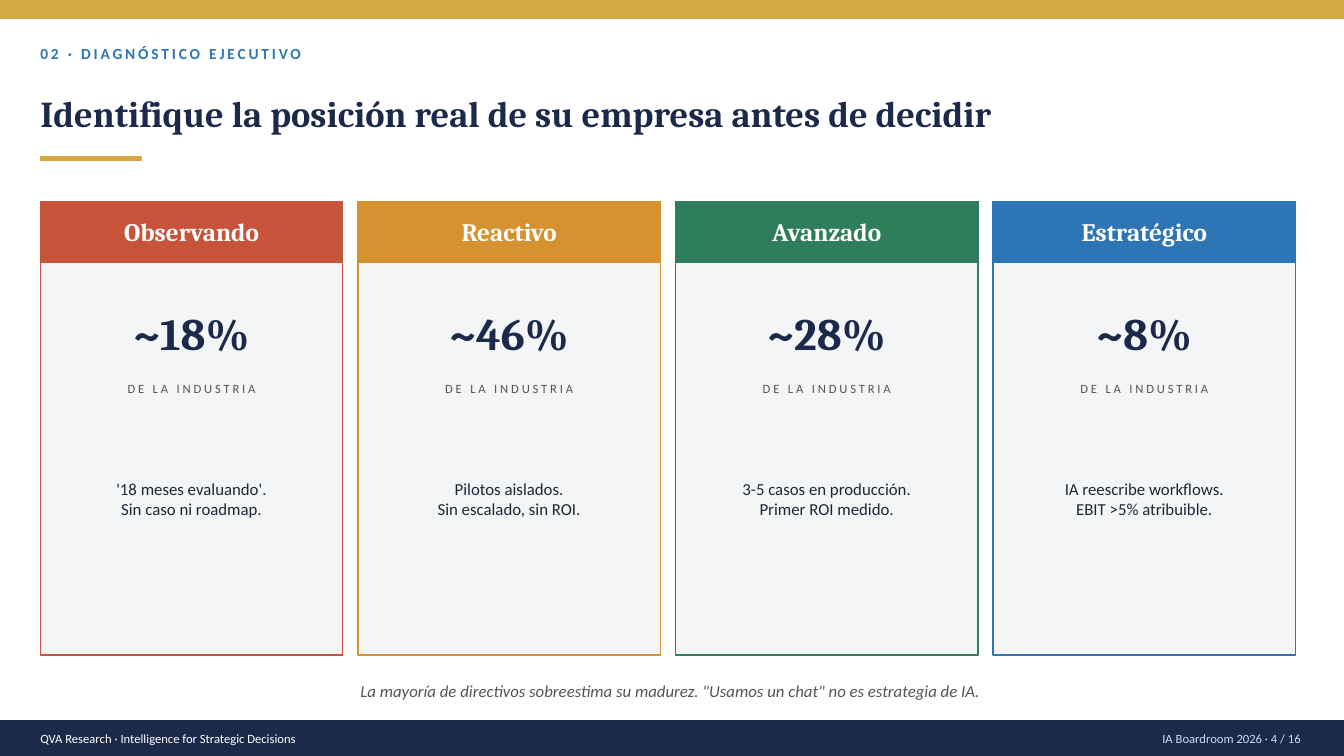
import pptx
import pptx.dml.color
import pptx.enum.shapes
import pptx.enum.text
import pptx.util

Inches = pptx.util.Inches
ALIGN = pptx.enum.text.PP_ALIGN
NAVY, GOLD, BLUE, GREY, WHITE = "1B2A4A", "D4A843", "2E75B6", "555555", "FFFFFF"
SLIDE_WIDTH = 13.33
MARGIN = 0.4
CONTENT_WIDTH = 12.5

presentation = pptx.Presentation()
presentation.slide_width = Inches(SLIDE_WIDTH)
presentation.slide_height = Inches(7.5)
slide = presentation.slides.add_slide(presentation.slide_layouts[5])


def add_rectangle(left, top, width, height, fill, line):
    shape = slide.shapes.add_shape(
        pptx.enum.shapes.MSO_SHAPE.RECTANGLE,
        Inches(left), Inches(top), Inches(width), Inches(height))
    shape.shadow.inherit = False
    shape.fill.solid()
    shape.fill.fore_color.rgb = pptx.dml.color.RGBColor.from_string(fill)
    shape.line.color.rgb = pptx.dml.color.RGBColor.from_string(line)
    shape.line.width = pptx.util.Pt(1)


def add_text(left, top, width, height, lines, size, color, name="Calibri",
             align=ALIGN.LEFT, spacing=0, shape=None, **font_format):
    """Write one paragraph per line, in the given shape or a new text box; spacing is in points."""
    shape = shape or slide.shapes.add_textbox(0, 0, 0, 0)
    place = {"left": left, "top": top, "width": width, "height": height}
    for attribute, value in place.items():
        setattr(shape, attribute, Inches(value))
    frame = shape.text_frame
    frame_format = {
        "word_wrap": True, "auto_size": pptx.enum.text.MSO_AUTO_SIZE.NONE,
        "vertical_anchor": pptx.enum.text.MSO_ANCHOR.MIDDLE,
        "margin_left": 0, "margin_top": 0, "margin_right": 0, "margin_bottom": 0}
    for attribute, value in frame_format.items():
        setattr(frame, attribute, value)
    frame.text = "\n".join(lines)
    font_format.update(size=pptx.util.Pt(size), name=name)
    for paragraph in frame.paragraphs:
        paragraph.alignment = align
        for run in paragraph.runs:
            for attribute, value in font_format.items():
                setattr(run.font, attribute, value)
            run.font.color.rgb = pptx.dml.color.RGBColor.from_string(color)
            if spacing:
                run._r.get_or_add_rPr().set("spc", str(spacing * 100))


# Heading
add_rectangle(0, 0, SLIDE_WIDTH, 0.18, GOLD, GOLD)
add_text(MARGIN, 0.35, CONTENT_WIDTH, 0.35, ["02 · DIAGNÓSTICO EJECUTIVO"],
         11, BLUE, spacing=2, bold=True)
add_text(MARGIN, 0.7, CONTENT_WIDTH, 0.85,
         ["Identifique la posición real de su empresa antes de decidir"],
         26, NAVY, "Cambria", shape=slide.shapes.title, bold=True)
add_rectangle(MARGIN, 1.55, 1, 0.04, GOLD, GOLD)

# Maturity cards
CARD_WIDTH, CARD_GAP, CARD_TOP = 3, 0.15, 2
cards = [
    ("Observando", "~18%", ["'18 meses evaluando'.", "Sin caso ni roadmap."], "C8533B"),
    ("Reactivo", "~46%", ["Pilotos aislados.", "Sin escalado, sin ROI."], "D69130"),
    ("Avanzado", "~28%", ["3-5 casos en producción.", "Primer ROI medido."], "2E7D5B"),
    ("Estratégico", "~8%", ["IA reescribe workflows.", "EBIT >5% atribuible."], BLUE),
]
for index, (level, share, description, color) in enumerate(cards):
    left = MARGIN + index * (CARD_WIDTH + CARD_GAP)
    add_rectangle(left, CARD_TOP, CARD_WIDTH, 4.5, "F4F5F7", color)
    add_rectangle(left, CARD_TOP, CARD_WIDTH, 0.6, color, color)
    card_texts = [
        (0, 2.05, 0.5, [level], {"size": 18, "color": WHITE, "name": "Cambria", "bold": True}),
        (0.1, 2.9, 0.8, [share], {"size": 32, "color": NAVY, "name": "Cambria", "bold": True}),
        (0.1, 3.7, 0.3, ["DE LA INDUSTRIA"], {"size": 9, "color": GREY, "spacing": 2}),
        (0.2, 4.2, 1.5, description, {"size": 12, "color": "1A2836"}),
    ]
    for inset, top, height, lines, text_format in card_texts:
        add_text(left + inset, top, CARD_WIDTH - 2 * inset, height, lines,
                 align=ALIGN.CENTER, **text_format)

# Closing remark and footer
add_text(MARGIN, 6.7, CONTENT_WIDTH, 0.3,
         ['La mayoría de directivos sobreestima su madurez. "Usamos un chat" no es estrategia de IA.'],
         12, GREY, align=ALIGN.CENTER, italic=True)
add_rectangle(0, 7.15, SLIDE_WIDTH, 0.35, NAVY, NAVY)
add_text(MARGIN, 7.18, 7, 0.3, ["QVA Research · Intelligence for Strategic Decisions"], 9, WHITE)
add_text(7.5, 7.18, 5.4, 0.3, ["IA Boardroom 2026 · 4 / 16"], 9, "CADCFC", align=ALIGN.RIGHT)

presentation.save("out.pptx")
